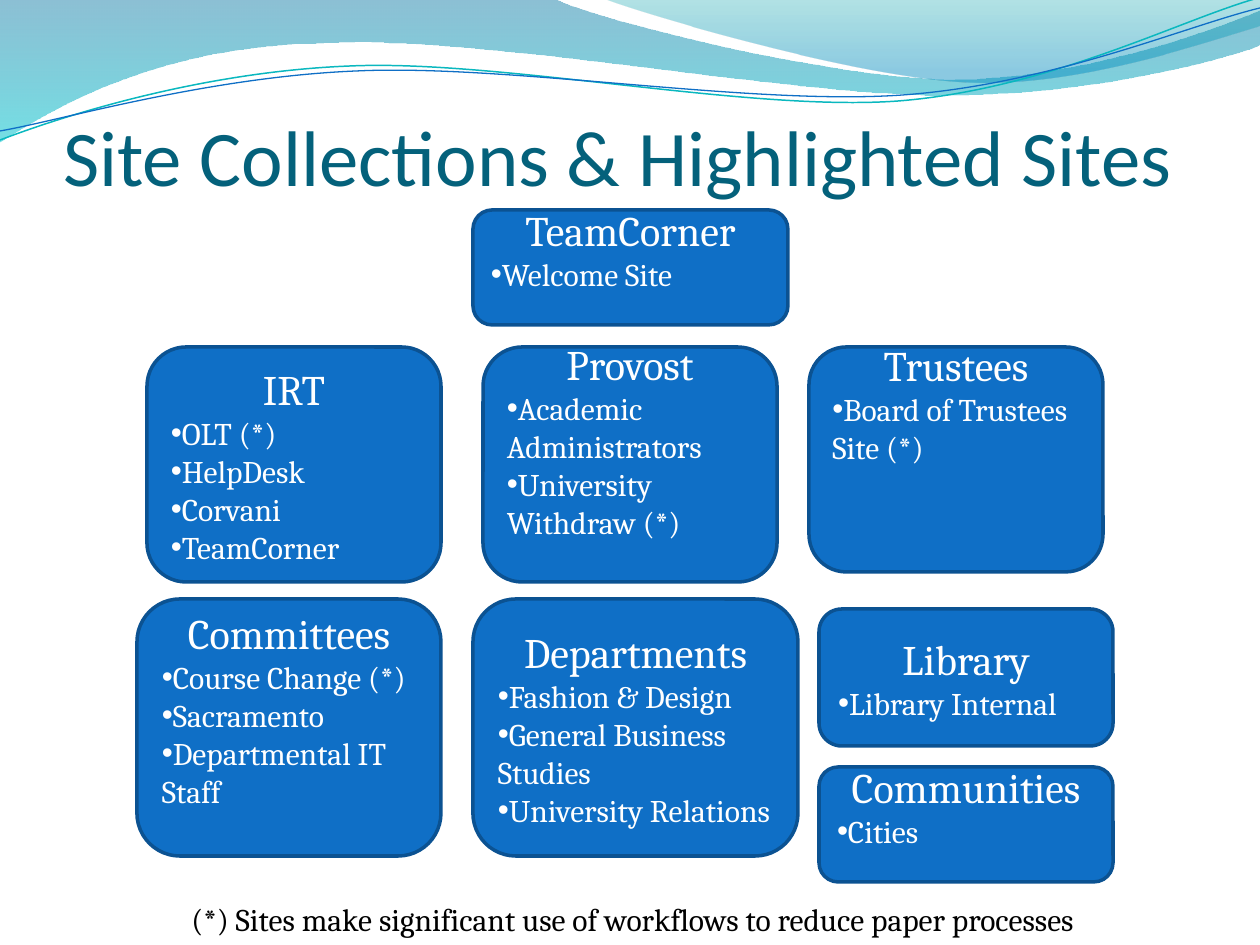
from lxml import etree
from pptx import Presentation
from pptx.dml.color import RGBColor
from pptx.enum.shapes import MSO_SHAPE
from pptx.enum.text import MSO_ANCHOR, PP_ALIGN
from pptx.oxml.ns import qn
from pptx.util import Emu, Pt

ROUNDED = MSO_SHAPE.ROUNDED_RECTANGLE
MIDDLE, BOTTOM = MSO_ANCHOR.MIDDLE, MSO_ANCHOR.BOTTOM
LEFT, CENTER = PP_ALIGN.LEFT, PP_ALIGN.CENTER

PX_PER_INCH = 126
SERIF, SANS = "Cambria", "Calibri"
BLUE, DARK_BLUE, WHITE = "0F6FC6", "0B5292", "FFFFFF"
INSET = 6

# Each curve: start point, then segments of one point (line) or three (cubic), in px.
WIDE_WAVE = [(0, 0), [(554, -1)], [(600, 21), (837, 79), (955, 79)],
             [(1074, 79), (1207, 33), (1260, 11)], [(1261, 45)],
             [(1239, 55), (1096, 96), (940, 95)],
             [(784, 95), (481, 35), (324, 43)],
             [(163, 45), (58, 105), (-1, 142)]]
RIGHT_WAVE = [(604, -1), [(641, 14), (859, 78), (969, 82)],
              [(1079, 87), (1211, 40), (1260, 26)], [(1260, 0)]]
TEAL_LINE = [(0, 140), [(60, 117), (199, 72), (349, 66)],
             [(498, 59), (747, 112), (898, 101)],
             [(1050, 89), (1182, 19), (1258, -2)]]
BLUE_LINE = [(0, 131), [(59, 121), (207, 77), (357, 71)],
             [(508, 64), (752, 106), (903, 95)],
             [(1053, 84), (1186, 26), (1260, 8)]]

# Left, top, width, height, room kept free below the text (px), heading, sites.
SITE_BOXES = [
    (147, 347, 294, 235, 0, "IRT",
     ["OLT (*)", "HelpDesk", "Corvani", "TeamCorner"]),
    (483, 347, 294, 235, 50, "Provost",
     ["Academic Administrators", "University Withdraw (*)"]),
    (819, 609, 294, 137, 0, "Library", ["Library Internal"]),
    (137, 599, 304, 257, 38, "Committees",
     ["Course Change (*)", "Sacramento", "Departmental IT Staff"]),
    (473, 599, 325, 257, 0, "Departments",
     ["Fashion & Design", "General Business Studies", "University Relations"]),
    (809, 347, 294, 225, 114, "Trustees", ["Board of Trustees Site (*)"]),
    (819, 767, 294, 115, 38, "Communities", ["Cities"]),
    (473, 210, 315, 115, 38, "TeamCorner", ["Welcome Site"]),
]


def px(length):
    return Emu(round(length * 914400 / PX_PER_INCH))


def color(hex_code):
    return RGBColor.from_string(hex_code)


def add_span(para, text, size, font, hex_code):
    span = para.add_run()
    span.text = text
    span.font.size = Pt(size)
    span.font.name = font
    span.font.color.rgb = color(hex_code)


def add_bullet(para):
    """Put the bullet directly before the text, without a hanging indent."""
    props = para._p.get_or_add_pPr()
    props.set("marL", "0")
    props.set("indent", "0")
    etree.SubElement(props, qn("a:buFont")).set("typeface", "Arial")
    etree.SubElement(props, qn("a:buChar")).set("char", "•")


def add_outline(page, curve, closed):
    """Draw all points as a freeform, then join each group of three into a cubic."""
    start, *segments = curve
    points = [(px(x), px(y)) for segment in segments for x, y in segment]
    builder = page.shapes.build_freeform(px(start[0]), px(start[1]), scale=1.0)
    builder.add_line_segments(points, close=closed)
    shape = builder.convert_to_shape()
    shape.shadow.inherit = False
    steps = iter(list(shape._element.iter(qn("a:lnTo"))))
    for segment in segments:
        group = [next(steps) for _ in segment]
        if len(group) == 3:
            cubic = etree.Element(qn("a:cubicBezTo"))
            group[0].addprevious(cubic)
            for step in group:
                cubic.append(step[0])
                step.getparent().remove(step)
    return shape


def add_wave(page, curve, stops):
    """Fill a wave downwards with stops of position, colour and opacity in percent."""
    wave = add_outline(page, curve, True)
    wave.line.fill.background()
    wave.fill.gradient()
    wave.fill.gradient_angle = 270
    for stop, (position, hex_code, _) in zip(wave.fill.gradient_stops, stops):
        stop.position = position / 100
        stop.color.rgb = color(hex_code)
    shades = wave._element.spPr.iter(qn("a:srgbClr"))
    for shade, (_, _, opacity) in zip(shades, stops):
        etree.SubElement(shade, qn("a:alpha")).set("val", str(opacity * 1000))


def add_wave_line(page, curve, hex_code, width):
    line = add_outline(page, curve, False)
    line.fill.background()
    line.line.color.rgb = color(hex_code)
    line.line.width = Pt(width)


def set_title(page, text):
    title = page.shapes.title
    title.left, title.top, title.width, title.height = px(63), px(0), px(1134), px(202)
    frame = title.text_frame
    frame.word_wrap = True
    frame.vertical_anchor = BOTTOM
    frame.margin_left = frame.margin_right = frame.margin_bottom = 0
    para = frame.paragraphs[0]
    para.alignment = LEFT
    add_span(para, text, 45, SANS, "04617B")


def add_site_box(page, left, top, width, height, room_below, heading, sites):
    box = page.shapes.add_shape(ROUNDED, px(left), px(top), px(width), px(height))
    box.shadow.inherit = False
    box.fill.solid()
    box.fill.fore_color.rgb = color(BLUE)
    box.line.color.rgb = color(DARK_BLUE)
    box.line.width = Pt(2)
    frame = box.text_frame
    frame.word_wrap = True
    frame.vertical_anchor = MIDDLE
    frame.margin_bottom = px(INSET + room_below)
    para = frame.paragraphs[0]
    para.alignment = CENTER
    add_span(para, heading, 24, SERIF, WHITE)
    for site in sites:
        para = frame.add_paragraph()
        para.alignment = LEFT
        add_bullet(para)
        add_span(para, site, 18, SERIF, WHITE)


def add_footnote(page, text):
    box = page.shapes.add_textbox(px(179), px(894), px(919), px(50))
    box.text_frame.word_wrap = False
    add_span(box.text_frame.paragraphs[0], text, 18, SERIF, "000000")


def main():
    deck = Presentation()
    deck.slide_width, deck.slide_height = px(1260), px(945)
    page = deck.slides.add_slide(deck.slide_layouts.get_by_name("Title Only"))
    add_wave(page, WIDE_WAVE, [(0, "0074A1", 45), (100, "00C6CF", 55)])
    add_wave(page, RIGHT_WAVE, [(0, "00A1A9", 30), (80, "008BBF", 45)])
    add_wave_line(page, TEAL_LINE, "0AB8BF", 0.85)
    add_wave_line(page, BLUE_LINE, BLUE, 0.75)
    set_title(page, "Site Collections & Highlighted Sites")
    for site_box in SITE_BOXES:
        add_site_box(page, *site_box)
    add_footnote(page, "(*) Sites make significant use of workflows to reduce paper processes")
    deck.save("out.pptx")


if __name__ == "__main__":
    main()
